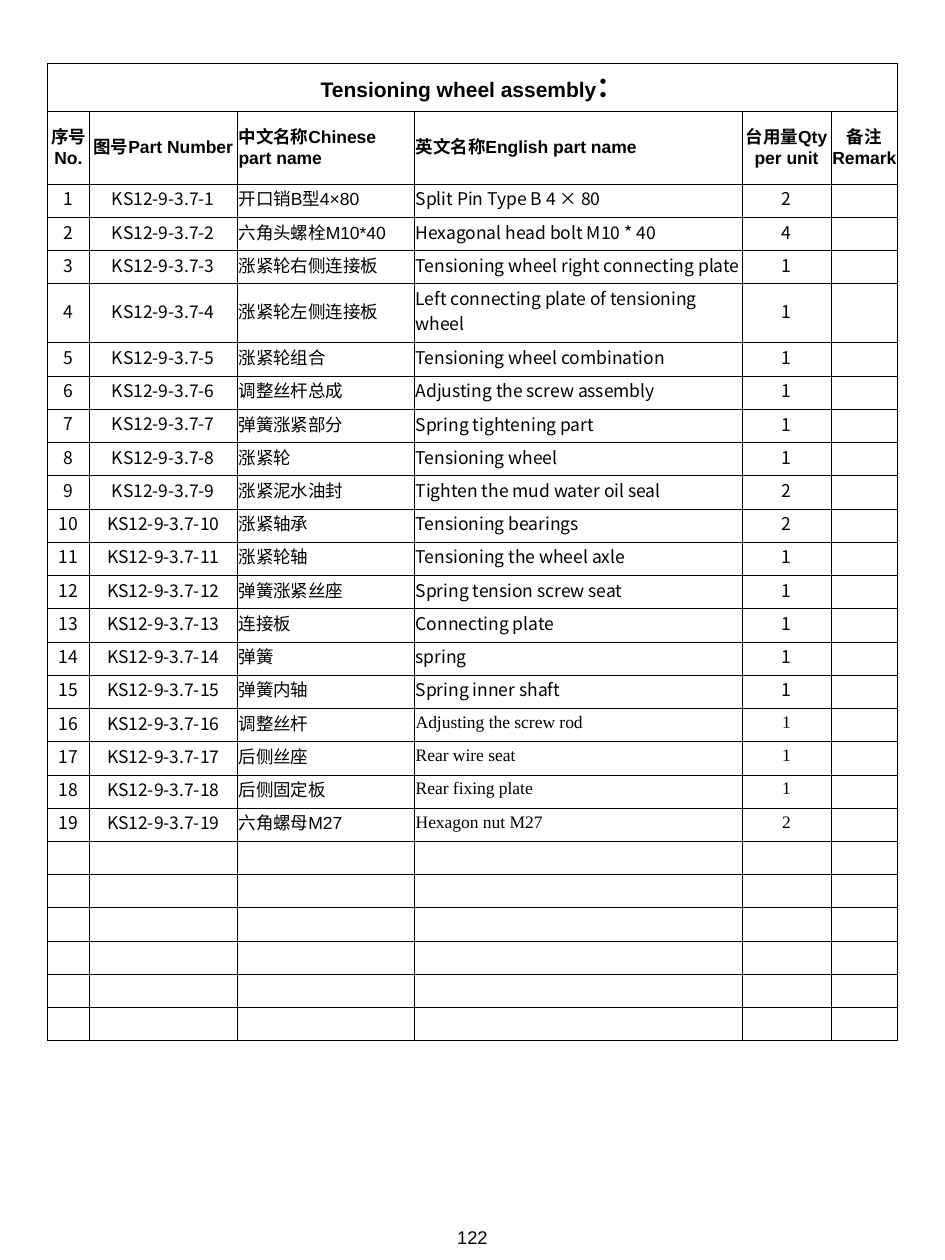
from lxml import etree
from pptx import Presentation
from pptx.dml import color
from pptx.enum import text
from pptx.oxml import ns
from pptx.util import Cm, Pt

HUES = {"ink": "000000", "paper": "FFFFFF"}
SANS, CJK, SERIF = "Arial", "Noto Sans CJK SC", "Times New Roman"
MID, LOW = text.MSO_ANCHOR.MIDDLE, text.MSO_ANCHOR.BOTTOM
LEFT, MITTE = text.PP_ALIGN.LEFT, text.PP_ALIGN.CENTER
ALIGNS = [MITTE, MITTE, LEFT, LEFT, MITTE, MITTE]
COLS = [0.84, 2.98, 3.57, 6.61, 1.79, 1.35]
TITLE = ["Tensioning wheel assembly", "："]
HEADS = ["序号No.", "图号Part Number", "中文名称Chinese part name",
         "英文名称English part name", "台用量Qty per unit", "备注Remark"]
PARTS = [
    ("开口销B型4×80", "Split Pin Type B 4 × 80", 2),
    ("六角头螺栓M10*40", "Hexagonal head bolt M10 * 40", 4),
    ("涨紧轮右侧连接板", "Tensioning wheel right connecting plate", 1),
    ("涨紧轮左侧连接板", "Left connecting plate of tensioning wheel", 1),
    ("涨紧轮组合", "Tensioning wheel combination", 1),
    ("调整丝杆总成", "Adjusting the screw assembly", 1),
    ("弹簧涨紧部分", "Spring tightening part", 1),
    ("涨紧轮", "Tensioning wheel", 1),
    ("涨紧泥水油封", "Tighten the mud water oil seal", 2),
    ("涨紧轴承", "Tensioning bearings", 2),
    ("涨紧轮轴", "Tensioning the wheel axle", 1),
    ("弹簧涨紧丝座", "Spring tension screw seat", 1),
    ("连接板", "Connecting plate", 1),
    ("弹簧", "spring", 1),
    ("弹簧内轴", "Spring inner shaft", 1),
    ("调整丝杆", "Adjusting the screw rod", 1),
    ("后侧丝座", "Rear wire seat", 1),
    ("后侧固定板", "Rear fixing plate", 1),
    ("六角螺母M27", "Hexagon nut M27", 2),
]
SPARE = 6


def style(run, face, size, bold=False):
    font = run.font
    font.name, font.size, font.bold = face, Pt(size), bold
    font.color.rgb = color.RGBColor.from_string(HUES["ink"])
    etree.SubElement(run._r.get_or_add_rPr(), ns.qn("a:ea"), typeface=CJK)


def frame(cell):
    props = cell._tc.get_or_add_tcPr()
    for at, side in enumerate(("lnL", "lnR", "lnT", "lnB")):
        line = etree.Element(ns.qn("a:" + side), w=str(Pt(0.5)))
        fill = etree.SubElement(line, ns.qn("a:solidFill"))
        etree.SubElement(fill, ns.qn("a:srgbClr"), val=HUES["ink"])
        props.insert(at, line)


def write(cell, words, face, align, bold=False, anchor=MID):
    para = cell.text_frame.paragraphs[0]
    para.alignment = align
    cell.vertical_anchor = anchor
    if words:
        para.text = words
        style(para.runs[0], face, 10, bold)
    else:
        etree.SubElement(para._p, ns.qn("a:endParaRPr"), sz="1000")


def parts_table(slide, left, top):
    rows = [0.97, 1.45] + [0.67] * (len(PARTS) + SPARE)
    rows[5] = 1.19
    grid = slide.shapes.add_table(len(rows), len(COLS), Cm(left), Cm(top),
                                  Cm(sum(COLS)), Cm(sum(rows))).table
    grid.first_row = grid.horz_banding = False
    for col, wide in zip(grid.columns, COLS):
        col.width = Cm(wide)
    for row, high in zip(grid.rows, rows):
        row.height = Cm(high)
    for cell in grid.iter_cells():
        cell.margin_left = cell.margin_right = cell.margin_top = Cm(0.03)
        cell.margin_bottom = Cm(0.13)
        cell.fill.solid()
        cell.fill.fore_color.rgb = color.RGBColor.from_string(HUES["paper"])
        frame(cell)

    head = grid.cell(0, 0)
    head.merge(grid.cell(0, len(COLS) - 1))
    head.vertical_anchor = MID
    para = head.text_frame.paragraphs[0]
    para.alignment = MITTE
    for words, size in zip(TITLE, (12, 16)):
        run = para.add_run()
        run.text = words
        style(run, SANS, size, True)

    for col, words in enumerate(HEADS):
        write(grid.cell(1, col), words, SANS, ALIGNS[col], True)
    for num in range(1, len(PARTS) + SPARE + 1):
        line = [""] * len(COLS)
        if num <= len(PARTS):
            name, label, count = PARTS[num - 1]
            line = [str(num), f"KS12-9-3.7-{num}", name, label, str(count), ""]
        last = SERIF if num > 15 else CJK
        faces = [CJK, CJK, SANS, last, last, SANS]
        for col, words in enumerate(line):
            anchor = LOW if 6 <= num <= 15 and col in (2, 3, 4) else MID
            write(grid.cell(num + 1, col), words, faces[col], ALIGNS[col],
                  anchor=anchor)


def page_mark(slide, left, top, wide, high):
    box = slide.shapes.add_textbox(Cm(left), Cm(top), Cm(wide), Cm(high))
    body = box.text_frame
    body.word_wrap = True
    body.text = "122"
    body.paragraphs[0].alignment = MITTE
    style(body.paragraphs[0].runs[0], SANS, 10.5)


def main():
    deck = Presentation()
    deck.slide_width, deck.slide_height = Cm(19.05), Cm(25.4)
    slide = deck.slides.add_slide(deck.slide_layouts[6])
    parts_table(slide, 0.96, 1.28)
    page_mark(slide, 6.5, 24.59, 6.05, 0.71)
    deck.save("out.pptx")


if __name__ == "__main__":
    main()
